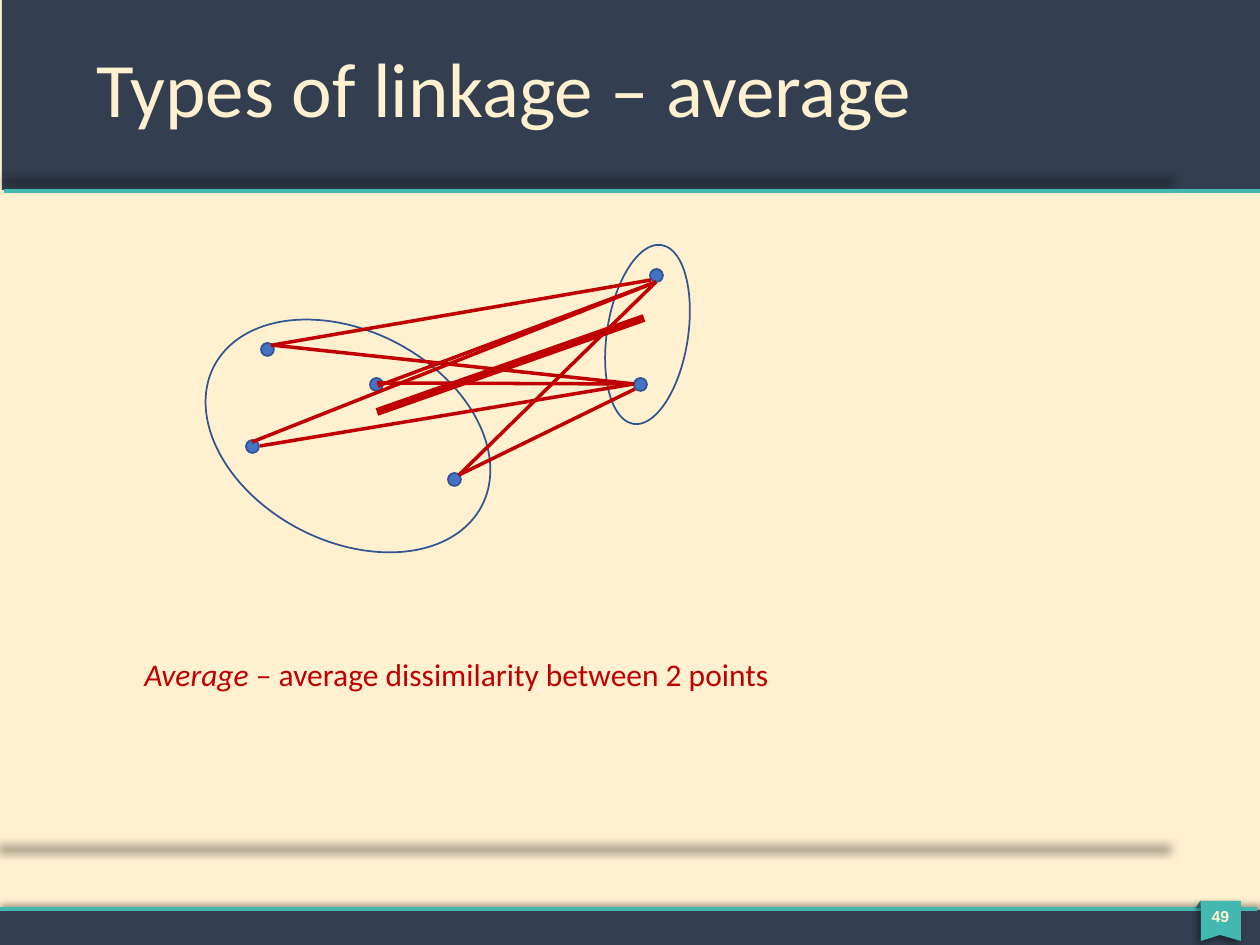
from typing import NamedTuple, Optional

from lxml.etree import SubElement
from pptx import Presentation
from pptx.dml.color import RGBColor
from pptx.enum.shapes import MSO_CONNECTOR, MSO_SHAPE
from pptx.enum.text import MSO_ANCHOR, MSO_AUTO_SIZE, PP_ALIGN
from pptx.oxml.ns import qn
from pptx.util import Emu, Pt

SCALE = 914400 / 126  # EMU in one px
CREAM, NAVY, TEAL, RED = "FFF1D0", "333F50", "42B8B0", "C00000"
BLUE, EDGE = "4472C4", "325491"


class Box(NamedTuple):
    x: int
    y: int
    w: int
    h: int
    turn: float = 0


class Line(NamedTuple):
    x1: int
    y1: int
    x2: int
    y2: int


class Shade(NamedTuple):
    alpha: int
    blur: int
    dist: int
    angle: int
    size: int = 100


def px(n: float) -> Emu:
    return Emu(round(n * SCALE))


def rgb(code: str) -> RGBColor:
    return RGBColor.from_string(code)


def cast(shape, shade: Optional[Shade]) -> None:
    """Give the shape an outer shadow, or none at all."""
    props = shape._element.spPr
    for old in props.findall(qn("a:effectLst")):
        props.remove(old)
    effect = SubElement(props, qn("a:effectLst"))
    if shade:
        outer = SubElement(effect, qn("a:outerShdw"), {
            "blurRad": str(Pt(shade.blur)), "dist": str(Pt(shade.dist)),
            "dir": str(shade.angle * 60000),
            "sx": str(shade.size * 1000), "sy": str(shade.size * 1000),
            "algn": "tl", "rotWithShape": "0"})
        tint = SubElement(outer, qn("a:srgbClr"), val="000000")
        SubElement(tint, qn("a:alpha"), val=str(shade.alpha * 1000))


def paint(shape, fill: Optional[str], edge: Optional[str] = None,
          shade: Optional[Shade] = None) -> None:
    if fill:
        shape.fill.solid()
        shape.fill.fore_color.rgb = rgb(fill)
    else:
        shape.fill.background()
    if edge:
        shape.line.color.rgb = rgb(edge)
        shape.line.width = Pt(1)
    else:
        shape.line.fill.background()
    cast(shape, shade)


def place(shape, box: Box) -> None:
    shape.left, shape.top = px(box.x), px(box.y)
    shape.width, shape.height = px(box.w), px(box.h)


def draw(slide, kind, box: Box, fill: Optional[str], edge: Optional[str] = None,
         shade: Optional[Shade] = None) -> None:
    shape = slide.shapes.add_shape(kind, *map(px, box[:4]))
    shape.rotation = box.turn
    paint(shape, fill, edge, shade)


def link(slide, line: Line, color: str, width: float = 2,
         shade: Optional[Shade] = None) -> None:
    wire = slide.shapes.add_connector(MSO_CONNECTOR.STRAIGHT, *map(px, line))
    wire.line.color.rgb = rgb(color)
    wire.line.width = Pt(width)
    cast(wire, shade)


def write(para, text: str, size: int, color: str, face: str = "Calibri",
          bold: bool = False, slant: bool = False) -> None:
    run = para.add_run()
    run.text = text
    font = run.font
    font.name, font.size, font.bold, font.italic = face, Pt(size), bold, slant
    font.color.rgb = rgb(color)


def label(slide, box: Box, wrap: bool):
    text = slide.shapes.add_textbox(*map(px, box[:4])).text_frame
    text.word_wrap = wrap
    text.auto_size = MSO_AUTO_SIZE.SHAPE_TO_FIT_TEXT
    return text.paragraphs[0]


RULE = Shade(90, 6, 2, 90, 93)
DOTS = [(267, 349), (252, 446), (376, 384), (454, 479), (640, 384), (656, 275)]
DOT = 13
GROUPS = [Box(197, 331, 302, 210, 27.6), Box(607, 244, 81, 181, 8.9)]
PAIRS = [
    Line(459, 475, 635, 389), Line(273, 345, 651, 280),
    Line(378, 386, 656, 282), Line(377, 383, 634, 384),
    Line(252, 442, 656, 282), Line(271, 345, 634, 384),
    Line(260, 446, 634, 384), Line(459, 475, 656, 282),
]
MEAN = Line(377, 412, 644, 318)


def frame(slide) -> None:
    # Header and footer bands with their rules
    draw(slide, MSO_SHAPE.RECTANGLE, Box(2, -25, 1260, 215), NAVY)
    link(slide, Line(4, 191, 1262, 191), TEAL, shade=RULE)
    draw(slide, MSO_SHAPE.RECTANGLE, Box(0, 910, 1260, 35), NAVY,
         shade=Shade(40, 4, 3, 270))
    link(slide, Line(-2, 909, 1257, 909), TEAL, shade=RULE)
    # Page ribbon
    pen = slide.shapes.build_freeform(1201, 901, scale=SCALE)
    pen.add_line_segments([(1241, 901), (1241, 941), (1220, 935), (1201, 941)])
    paint(pen.convert_to_shape(), TEAL, shade=Shade(40, 4, 3, 135))
    page = label(slide, Box(1194, 901, 53, 31), True)
    page.alignment = PP_ALIGN.CENTER
    write(page, "49", 9, CREAM, "Arial", bold=True)
    draw(slide, MSO_SHAPE.RIGHT_TRIANGLE, Box(1194, 902, 8, 5, 270), "225C58")


def head(slide) -> None:
    title = slide.shapes.title
    slide.shapes._spTree.append(title._element)  # in front of the header band
    place(title, Box(84, 1, 1086, 183))
    text = title.text_frame
    text.auto_size = MSO_AUTO_SIZE.NONE
    text.vertical_anchor = MSO_ANCHOR.MIDDLE
    para = text.paragraphs[0]
    para.alignment = PP_ALIGN.LEFT
    para.line_spacing = 0.9
    write(para, "Types of linkage – average", 44, CREAM)


def graph(slide) -> None:
    # Points and the groups around them
    for x, y in DOTS:
        spot = Box(x - DOT // 2, y - DOT // 2, DOT, DOT)
        draw(slide, MSO_SHAPE.OVAL, spot, BLUE, EDGE)
    for group in GROUPS:
        draw(slide, MSO_SHAPE.OVAL, group, None, EDGE)
    # Caption
    note = label(slide, Box(132, 649, 656, 50), False)
    write(note, "Average ", 18, RED, slant=True)
    write(note, "– average dissimilarity between 2 points", 18, RED)
    # All pairs, then their mean
    for pair in PAIRS:
        link(slide, pair, RED)
    link(slide, MEAN, RED, 4.5)


def main() -> None:
    deck = Presentation()
    deck.slide_width, deck.slide_height = px(1260), px(945)
    slide = deck.slides.add_slide(deck.slide_layouts[5])
    back = slide.background.fill
    back.solid()
    back.fore_color.rgb = rgb(CREAM)
    frame(slide)
    head(slide)
    graph(slide)
    deck.save("out.pptx")


if __name__ == "__main__":
    main()
